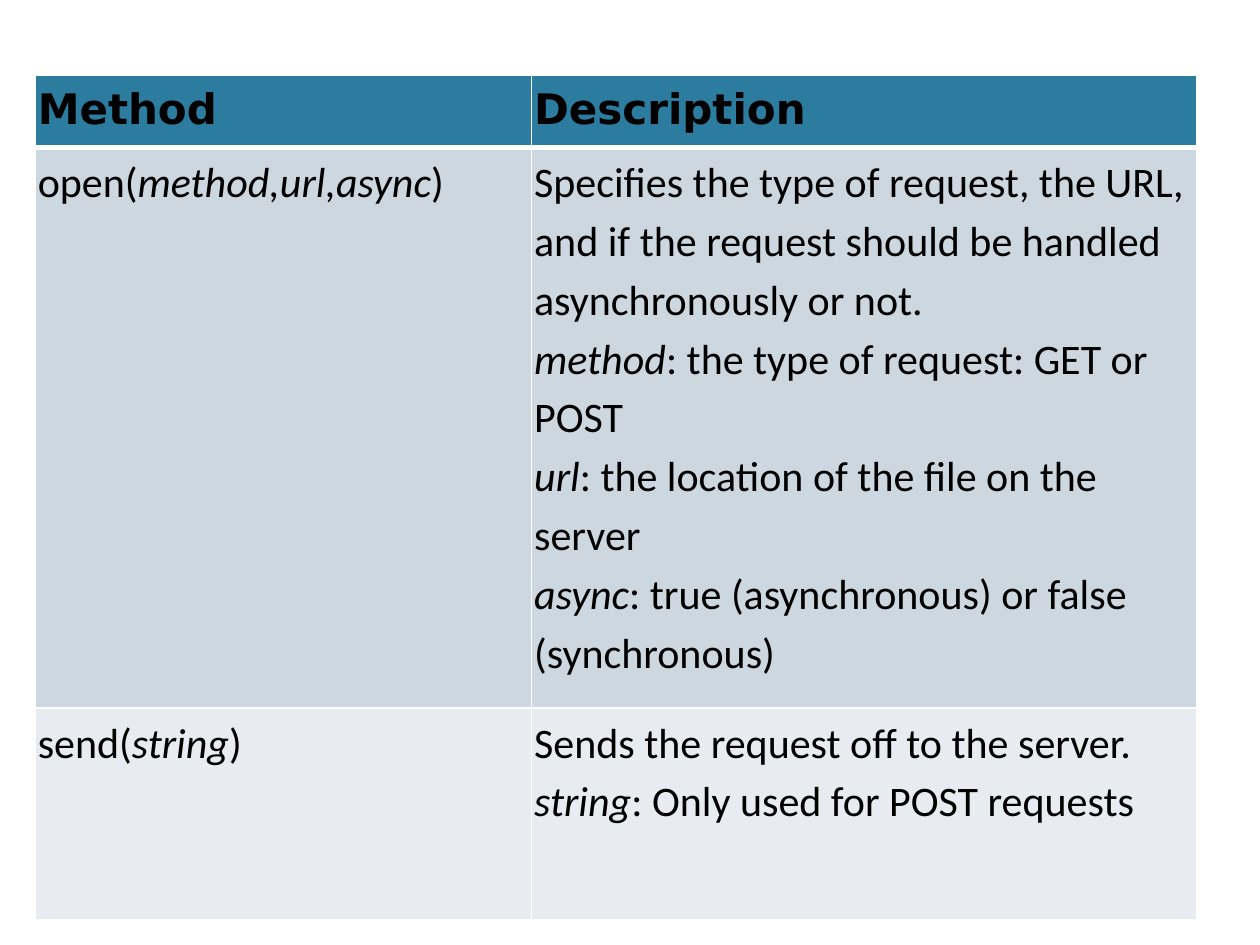
"""Build a slide with a table of request methods."""
import pptx
import pptx.util
import pptx.dml.color
import pptx.oxml

HEADINGS = ["Method", "Description"]
METHODS = [
    (
        [["open(", "method,url,async", ")"]],
        [
            ["Specifies the type of request, the URL, and if the request should be "
             "handled asynchronously or not."],
            ["", "method", ": the type of request: GET or POST"],
            ["", "url", ": the location of the file on the server"],
            ["", "async", ": true (asynchronous) or false (synchronous)"],
        ],
    ),
    (
        [["send(", "string", ")"]],
        [
            ["Sends the request off to the server."],
            ["", "string", ": Only used for POST requests"],
        ],
    ),
]
COLUMN_WIDTHS = [3.94, 5.28]
ROW_HEIGHTS = [0.57, 4.45, 1.68]
ROW_FILLS = ["2C7C9F", "CDD7DF", "E8ECF0"]
LEFT, TOP = 0.28, 0.6
INSET = 0.02


def rgb(value):
    return pptx.dml.color.RGBColor.from_string(value)


def set_borders(cell, top, bottom):
    widths = {"lnL": 1, "lnR": 1, "lnT": top, "lnB": bottom}
    for position, (side, width) in enumerate(widths.items()):
        border = pptx.oxml.parse_xml(
            '<a:%s xmlns:a="http://schemas.openxmlformats.org/drawingml/2006/main" w="%d">'
            '<a:solidFill><a:srgbClr val="FFFFFF"/></a:solidFill></a:%s>'
            % (side, pptx.util.Pt(width), side)
        )
        cell._tc.get_or_add_tcPr().insert(position, border)


def fill_cell(cell, paragraphs, fill, font_name, bold):
    cell.margin_left = cell.margin_right = pptx.util.Inches(INSET)
    cell.margin_top = cell.margin_bottom = pptx.util.Inches(INSET)
    cell.fill.solid()
    cell.fill.fore_color.rgb = rgb(fill)
    frame = cell.text_frame
    for number, pieces in enumerate(paragraphs):
        paragraph = frame.add_paragraph() if number else frame.paragraphs[0]
        paragraph.line_spacing = 1.15
        paragraph.font.name = font_name
        paragraph.font.size = pptx.util.Pt(24)
        paragraph.font.bold = bold
        paragraph.font.color.rgb = rgb("000000")
        for position, piece in enumerate(pieces):
            if piece:
                run = paragraph.add_run()
                run.text = piece
                run.font.italic = position % 2 == 1


def main():
    deck = pptx.Presentation()
    deck.slide_width = pptx.util.Inches(10)
    deck.slide_height = pptx.util.Inches(7.5)
    slide = deck.slides.add_slide(deck.slide_layouts[6])

    rows = [[[[heading]] for heading in HEADINGS], *METHODS]
    methods = slide.shapes.add_table(
        len(rows), len(HEADINGS),
        pptx.util.Inches(LEFT), pptx.util.Inches(TOP),
        pptx.util.Inches(sum(COLUMN_WIDTHS)), pptx.util.Inches(sum(ROW_HEIGHTS)),
    ).table
    for column, width in zip(methods.columns, COLUMN_WIDTHS):
        column.width = pptx.util.Inches(width)
    for index, (row, height, fill) in enumerate(zip(rows, ROW_HEIGHTS, ROW_FILLS)):
        methods.rows[index].height = pptx.util.Inches(height)
        header = index == 0
        for column, paragraphs in enumerate(row):
            cell = methods.cell(index, column)
            fill_cell(cell, paragraphs, fill, "DejaVu Sans" if header else "Calibri", header)
            set_borders(cell, 3 if index == 1 else 1, 3 if header else 1)
    deck.save("out.pptx")


if __name__ == "__main__":
    main()
